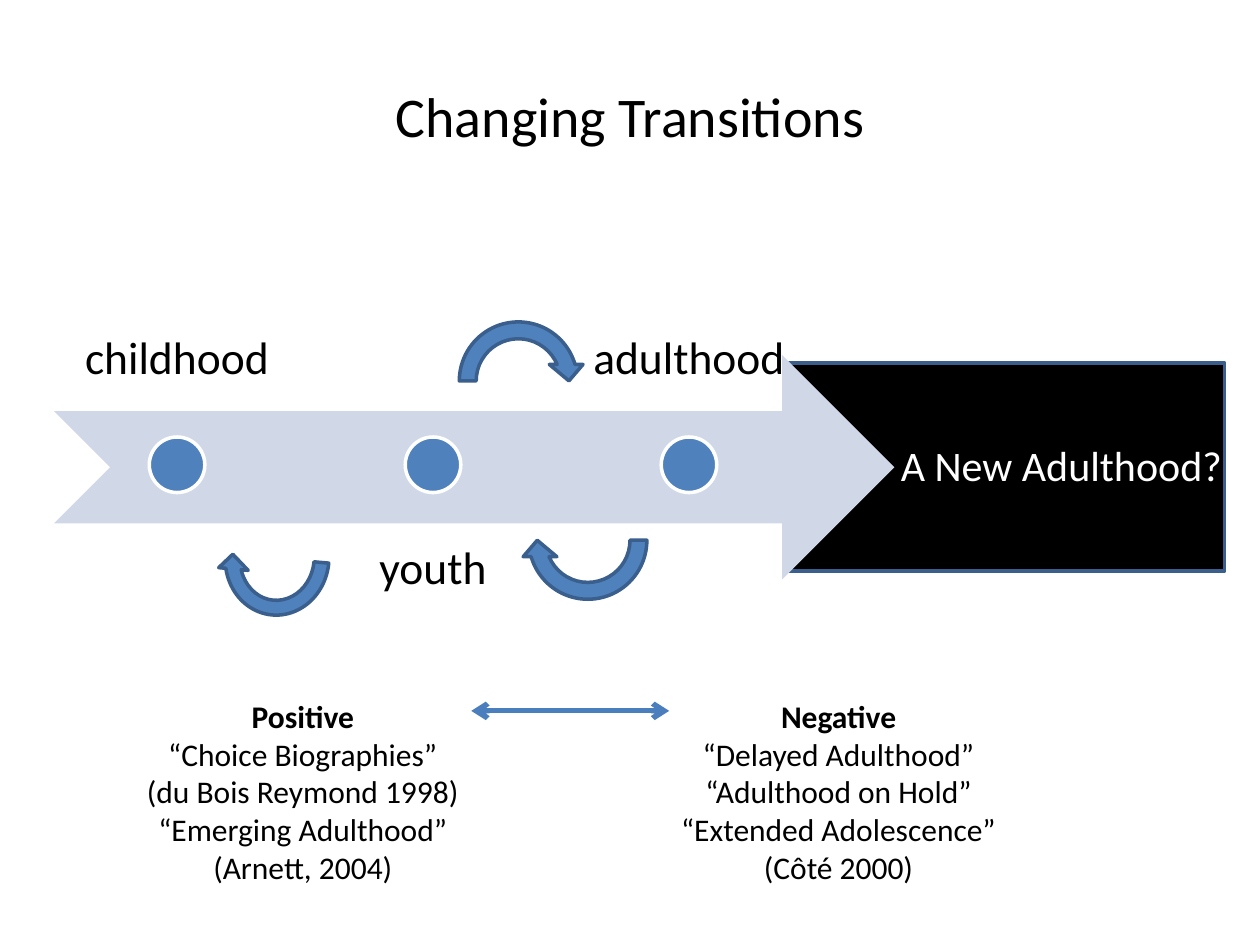
from pptx import Presentation
from pptx.dml.color import RGBColor
from pptx.enum.shapes import MSO_CONNECTOR, MSO_SHAPE
from pptx.enum.text import MSO_ANCHOR, MSO_AUTO_SIZE, PP_ALIGN
from pptx.oxml.ns import qn
from pptx.util import Cm, Pt
from lxml.etree import SubElement

THEME = {
    "font": "Calibri",
    "black": "000000", "white": "FFFFFF", "blue": "4F81BD",
    "edge": "3A5F8C", "pale": "D0D8E8", "link": "4B7EBC",
    "title": 32, "stage": 26, "new": 24, "list": 18,
    "line": 2, "bar": 3,
}

TITLE = ("Changing Transitions", (7.7, 1.52, 10.01, 1.63))
STAGES = ["childhood", "youth", "adulthood"]
NEW = ("A New Adulthood?", (17.91, 8.74, 7.01, 1.27))
LISTS = [
    (["Positive", "“Choice Biographies”", "(du Bois Reymond 1998)",
      "“Emerging Adulthood”", "(Arnett, 2004)"], (2.31, 13.92, 7.59, 4.88)),
    (["Negative", "“Delayed Adulthood”", "“Adulthood on Hold”",
      "“Extended Adolescence”", "(Côté 2000)"], (13.31, 13.92, 7.19, 4.11)),
]
BLOCK = (15.9, 7.32, 8.79, 4.19)
ARROW = (1.09, 7.16, 16.94, 4.52)
CURLS = [
    ((9.09, 6.32, 2.72, 2.72), 0),
    ((10.49, 9.53, 2.72, 2.72), 180),
    ((4.39, 9.96, 2.39, 2.59), 185.3),
]
LINK = (9.5, 14.33, 13.49, 14.33)
LEFT, STEP, WIDE, HIGH = 1.12, 5.16, 4.9, 4.52
ABOVE, BELOW = 3.73, 10.49
DOT, DOT_TOP = 1.12, 8.81


def color(name):
    return RGBColor.from_string(THEME[name])


def place(shape, box):
    shape.left, shape.top, shape.width, shape.height = map(Cm, box)


def draw(slide, kind, box, fill, edge=None):
    shape = slide.shapes.add_shape(kind, *map(Cm, box))
    shape.shadow.inherit = False
    shape.fill.solid()
    shape.fill.fore_color.rgb = color(fill)
    if edge:
        shape.line.color.rgb = color(edge)
        shape.line.width = Pt(THEME["line"])
    else:
        shape.line.fill.background()
    return shape


def write(shape, text, size, ink="black", align=PP_ALIGN.CENTER,
          anchor=MSO_ANCHOR.TOP, wrap=True):
    frame = shape.text_frame
    frame.text = text
    frame.word_wrap = wrap
    frame.auto_size = MSO_AUTO_SIZE.NONE
    frame.vertical_anchor = anchor
    for para in frame.paragraphs:
        para.alignment = align
        para.space_before = Pt(0)
        for run in para.runs:
            run.font.name = THEME["font"]
            run.font.size = Pt(THEME[size])
            run.font.color.rgb = color(ink)
    return frame


def add_list(shape, lines, box):
    place(shape, box)
    frame = write(shape, "\n".join(lines), "list")
    for para in frame.paragraphs:
        props = para._p.get_or_add_pPr()
        props.set("marL", "0")
        props.set("indent", "0")
        SubElement(props, qn("a:buNone"))
    frame.paragraphs[0].runs[0].font.bold = True


def add_stage(slide, spot, name):
    left = LEFT + spot * STEP
    low = spot % 2 == 1
    label = slide.shapes.add_textbox(
        *map(Cm, (left, BELOW if low else ABOVE, WIDE, HIGH)))
    frame = write(label, name, "stage",
                  anchor=MSO_ANCHOR.TOP if low else MSO_ANCHOR.BOTTOM)
    frame.margin_left = frame.margin_right = Cm(0.51)
    frame.margin_top = frame.margin_bottom = Cm(0.51)
    frame.paragraphs[0].line_spacing = 0.9
    draw(slide, MSO_SHAPE.OVAL,
         (left + (WIDE - DOT) / 2, DOT_TOP, DOT, DOT), "blue", "white")


def add_link(slide):
    link = slide.shapes.add_connector(MSO_CONNECTOR.STRAIGHT, *map(Cm, LINK))
    link.line.color.rgb = color("link")
    link.line.width = Pt(THEME["bar"])
    line = link.line._get_or_add_ln()
    for end in ("a:headEnd", "a:tailEnd"):
        SubElement(line, qn(end), type="arrow")
    SubElement(link._element.spPr, qn("a:effectLst"))


def main():
    deck = Presentation()
    deck.slide_width, deck.slide_height = Cm(25.4), Cm(19.05)
    slide = deck.slides.add_slide(deck.slide_layouts[3])
    title, *bodies = slide.placeholders

    place(title, TITLE[1])
    write(title, TITLE[0], "title", wrap=False)
    for body, (lines, box) in zip(bodies, LISTS):
        if body.placeholder_format.idx < 10:
            add_list(body, lines, box)

    draw(slide, MSO_SHAPE.RECTANGLE, BLOCK, "black", "edge")
    draw(slide, MSO_SHAPE.NOTCHED_RIGHT_ARROW, ARROW, "pale")
    for spot, name in enumerate(STAGES):
        add_stage(slide, spot, name)
    for box, turn in CURLS:
        curl = draw(slide, MSO_SHAPE.CIRCULAR_ARROW, box, "blue", "edge")
        curl.rotation = turn

    label = slide.shapes.add_textbox(*map(Cm, NEW[1]))
    write(label, NEW[0], "new", "white", PP_ALIGN.LEFT, wrap=False)
    add_link(slide)
    deck.save("out.pptx")


if __name__ == "__main__":
    main()
